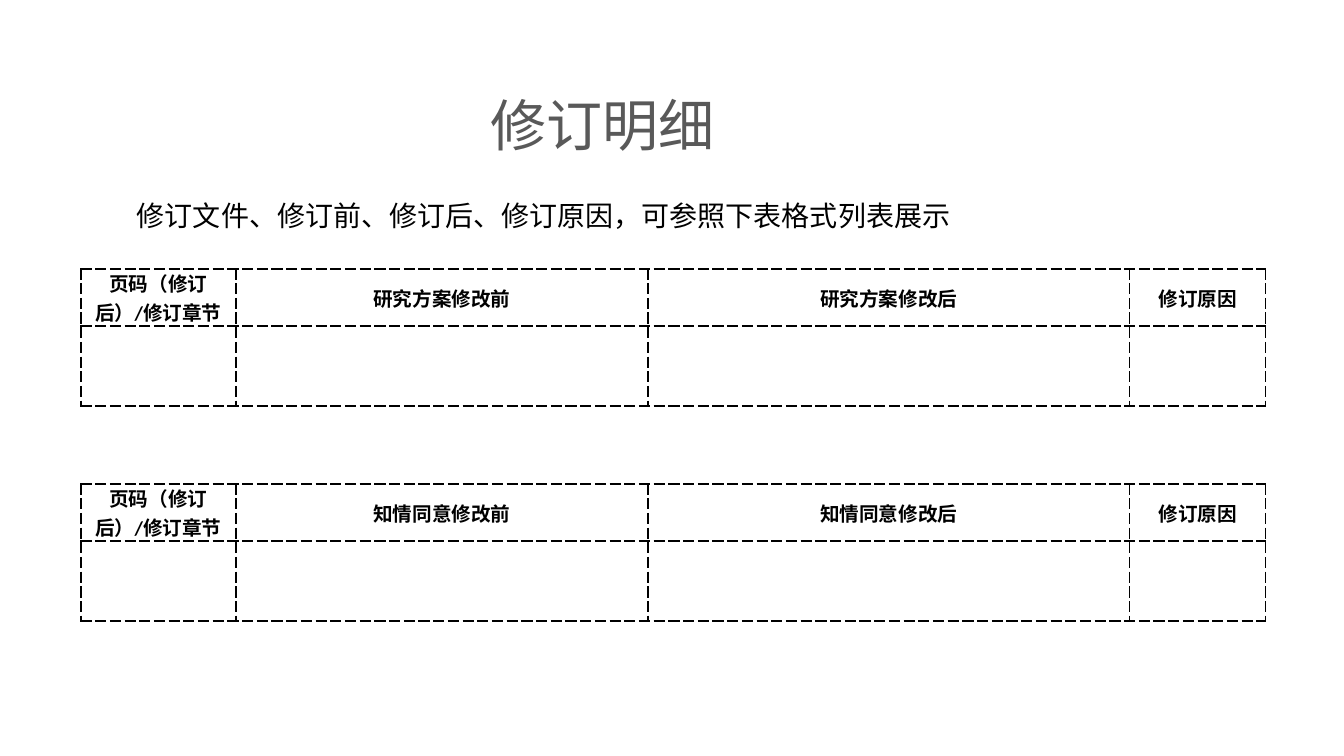
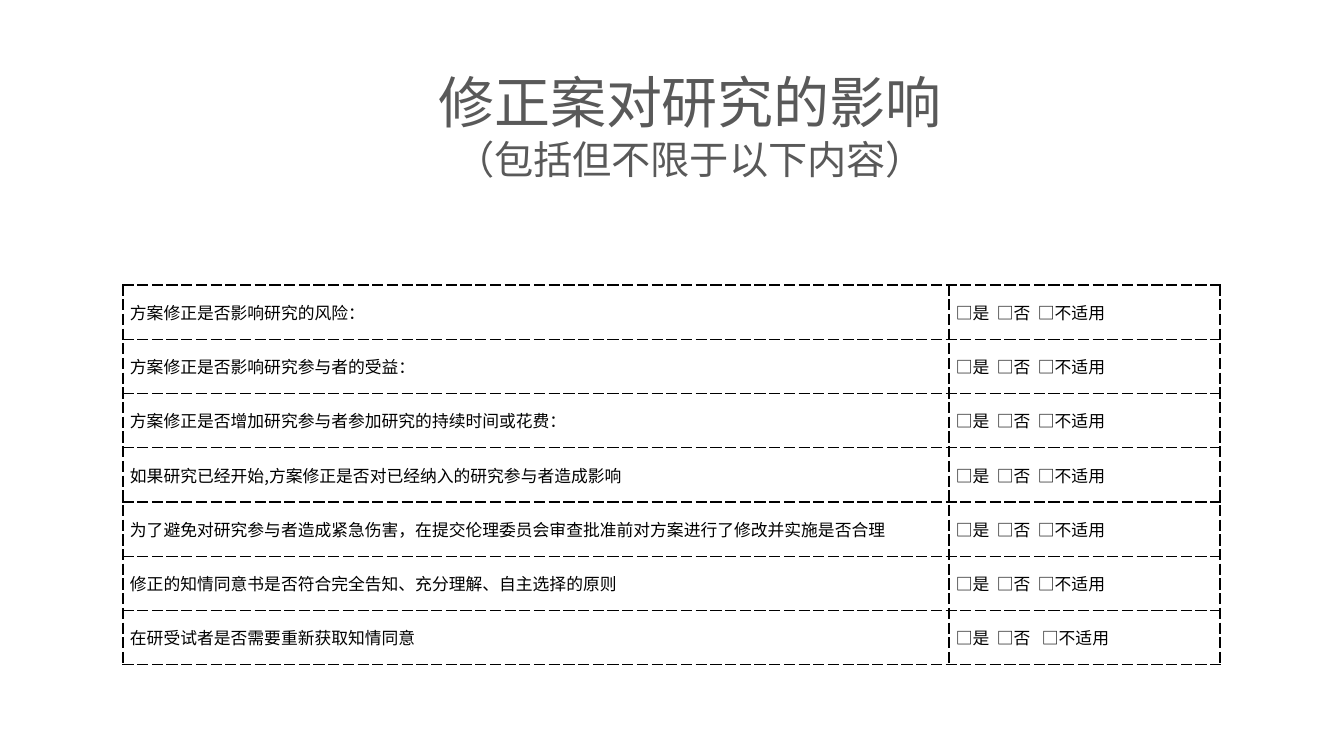
from lxml.etree import SubElement
from pptx import Presentation
from pptx.dml.color import RGBColor
from pptx.enum.text import MSO_ANCHOR as Anchor, MSO_AUTO_SIZE as AutoSize, PP_ALIGN as Align
from pptx.oxml.ns import qn
from pptx.util import Emu, Pt

SCALE = 914400 / 100.8
SANS = "Noto Sans CJK SC"
LATIN = "Calibri"
BLACK = "000000"
GREY = "595959"


def px(length):
    return Emu(round(length * SCALE))


def color(code):
    return RGBColor.from_string(code)


def write(para, text, size=12, font=SANS, fill=BLACK, bold=False, align=Align.LEFT, spacing=None, tabs=()):
    para.alignment = align
    if spacing:
        para.line_spacing = spacing
    if tabs:
        stops = SubElement(para._p.get_or_add_pPr(), qn("a:tabLst"))
        for stop in tabs:
            SubElement(stops, qn("a:tab"), pos=str(px(stop)), algn="l")
    span = para.add_run()
    span.text = text
    span.font.name = font
    span.font.size = Pt(size)
    span.font.bold = bold
    span.font.color.rgb = color(fill)
    SubElement(span._r.get_or_add_rPr(), qn("a:ea"), typeface=SANS)


class Board:
    def __init__(self):
        self.deck = Presentation()
        self.deck.slide_width = px(1344)
        self.deck.slide_height = px(756)
        self.page = None

    def add_page(self):
        self.page = self.deck.slides.add_slide(self.deck.slide_layouts[6])

    def text_box(self, left, top, width, height, wrap=True):
        box = self.page.shapes.add_textbox(px(left), px(top), px(width), px(height))
        frame = box.text_frame
        frame.word_wrap = wrap
        frame.auto_size = AutoSize.NONE if wrap else AutoSize.SHAPE_TO_FIT_TEXT
        return frame

    def title(self, left, top, width, height, text, subtitle=None):
        frame = self.text_box(left, top, width, height, wrap=False)
        align = Align.CENTER if subtitle else Align.LEFT
        write(frame.paragraphs[0], text, size=40, fill=GREY, align=align)
        if subtitle:
            write(frame.add_paragraph(), subtitle, size=28, fill=GREY, align=align)

    def lead(self, left, top, width, height, text):
        frame = self.text_box(left, top, width, height)
        write(frame.paragraphs[0], text, size=20, spacing=1.5)

    def table(self, left, top, columns, rows):
        shape = self.page.shapes.add_table(
            len(rows), len(columns), px(left), px(top), px(sum(columns)), px(sum(rows)))
        grid = shape.table
        grid.first_row = grid.horz_banding = False
        for column, width in zip(grid.columns, columns):
            column.width = px(width)
        for row, height in zip(grid.rows, rows):
            row.height = px(height)
        for cell in grid.iter_cells():
            self.style_cell(cell)
        return grid

    def style_cell(self, cell):
        cell.margin_left = cell.margin_right = px(7)
        cell.margin_top = cell.margin_bottom = 0
        cell.vertical_anchor = Anchor.MIDDLE
        properties = cell._tc.get_or_add_tcPr()
        for side in "LRTB":
            line = SubElement(properties, qn(f"a:ln{side}"), w=str(Pt(1)))
            paint = SubElement(line, qn("a:solidFill"))
            SubElement(paint, qn("a:srgbClr"), val=BLACK)
            SubElement(line, qn("a:prstDash"), val="sysDash")
        cell.fill.background()

    def revision_table(self, top, document):
        grid = self.table(81, top, [155, 412, 482, 136], [57, 80])
        headers = ["页码（修订后）/修订章节", f"{document}修改前", f"{document}修改后", "修订原因"]
        for cell, header in zip(grid.rows[0].cells, headers):
            write(cell.text_frame.paragraphs[0], header, size=14, font=LATIN, bold=True, align=Align.CENTER)

    def checklist(self, left, top, columns, height, questions):
        count = len(questions)
        grid = self.table(left, top, columns, [height / count] * count)
        for index, question in enumerate(questions):
            tabs = (41, 86) if index == count - 1 else (41, 82)
            write(grid.cell(index, 0).text_frame.paragraphs[0], question, align=Align.JUSTIFY)
            write(grid.cell(index, 1).text_frame.paragraphs[0], "□是\t□否\t□不适用", tabs=tabs)


def main():
    board = Board()

    board.add_page()
    board.title(481, 86, 244, 78, "修订明细")
    board.lead(127, 177, 952, 86, "修订文件、修订前、修订后、修订原因，可参照下表格式列表展示")
    for top, document in [(269, "研究方案"), (484, "知情同意")]:
        board.revision_table(top, document)

    board.add_page()
    board.title(428, 63, 524, 125, "修正案对研究的影响", "（包括但不限于以下内容）")
    board.checklist(123, 285, [826, 271], 380, [
        "方案修正是否影响研究的风险：",
        "方案修正是否影响研究参与者的受益：",
        "方案修正是否增加研究参与者参加研究的持续时间或花费：",
        "如果研究已经开始,方案修正是否对已经纳入的研究参与者造成影响",
        "为了避免对研究参与者造成紧急伤害，在提交伦理委员会审查批准前对方案进行了修改并实施是否合理",
        "修正的知情同意书是否符合完全告知、充分理解、自主选择的原则",
        "在研受试者是否需要重新获取知情同意",
    ])

    board.deck.save("out.pptx")


if __name__ == "__main__":
    main()
